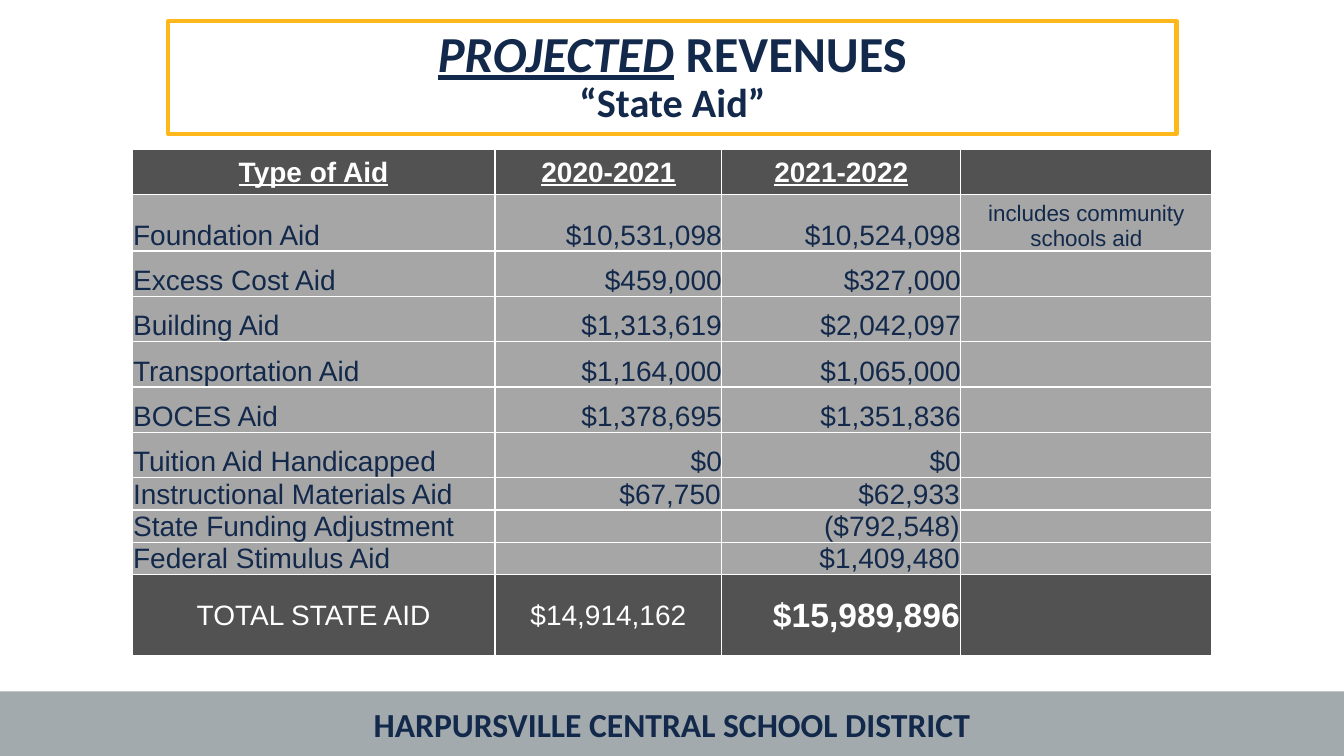
from lxml import etree
from pptx import Presentation
from pptx.dml.color import RGBColor
from pptx.enum.shapes import MSO_SHAPE as SHAPE
from pptx.enum.text import MSO_ANCHOR as ANCHOR, PP_ALIGN as ALIGN
from pptx.oxml.ns import qn
from pptx.util import Inches, Pt

TITLE = [("PROJECTED", 36, True), (" REVENUES", 36, False), ("“State Aid”", 28.8, False)]
FOOTER = "HARPURSVILLE CENTRAL SCHOOL DISTRICT"
ROWS = [
    ("Type of Aid", "2020-2021", "2021-2022", ""),
    ("Foundation Aid", "$10,531,098", "$10,524,098", "includes community schools aid"),
    ("Excess Cost Aid", "$459,000", "$327,000", ""),
    ("Building Aid", "$1,313,619", "$2,042,097", ""),
    ("Transportation Aid", "$1,164,000", "$1,065,000", ""),
    ("BOCES Aid", "$1,378,695", "$1,351,836", ""),
    ("Tuition Aid Handicapped", "$0", "$0", ""),
    ("Instructional Materials Aid", "$67,750", "$62,933", ""),
    ("State Funding Adjustment", "", "($792,548)", ""),
    ("Federal Stimulus Aid", "", "$1,409,480", ""),
    ("TOTAL STATE AID", "$14,914,162", "$15,989,896", ""),
]
COL_WIDTHS = [3.6, 2.25, 2.37, 2.49]
ROW_HEIGHTS = [0.45, 0.56] + [0.45] * 5 + [0.32] * 3 + [0.8]
BODY_ALIGN = [ALIGN.LEFT, ALIGN.RIGHT, ALIGN.RIGHT, ALIGN.CENTER]
THEME = dict(
    navy="13294B", gold="FFB81C", silver="A2AAAD", dark="525252", body="A6A6A6", white="FFFFFF",
    heading_font="Calibri", table_font="Arial", footer=24, cell=20, note=16, total=24,
)


def rgb(name):
    return RGBColor.from_string(THEME[name])


def style(r, font, size, color, bold=False):
    r.font.name, r.font.size, r.font.bold = THEME[font], Pt(size), bold
    r.font.color.rgb = rgb(color)


def add_box(slide, left, top, width, height, fill=None, line=None):
    sp = slide.shapes.add_shape(SHAPE.RECTANGLE, *map(Inches, (left, top, width, height)))
    sp.shadow.inherit = False
    if fill:
        sp.fill.solid()
        sp.fill.fore_color.rgb = rgb(fill)
    else:
        sp.fill.background()
    if line:
        sp.line.color.rgb = rgb(line)
        sp.line.width = Pt(3)
    else:
        sp.line.fill.background()
    tf = sp.text_frame
    tf.word_wrap, tf.vertical_anchor = True, ANCHOR.MIDDLE
    p = tf.paragraphs[0]
    p.alignment = ALIGN.CENTER
    return p


def add_borders(cell):
    pr = cell._tc.get_or_add_tcPr()
    for i, side in enumerate(("lnL", "lnR", "lnT", "lnB")):
        ln = etree.Element(qn(f"a:{side}"), w=str(Pt(1)))
        fill = etree.SubElement(ln, qn("a:solidFill"))
        etree.SubElement(fill, qn("a:srgbClr"), val=THEME["white"])
        pr.insert(i, ln)


def fill_cell(cell, text, row, col):
    header, total = row == 0, row == len(ROWS) - 1
    band = header or total
    grand_total = total and col == 2
    note = not band and col == 3
    tight = 0 < row < 7 and col in (1, 2)
    cell.fill.solid()
    cell.fill.fore_color.rgb = rgb("dark" if band else "body")
    cell.margin_left = cell.margin_right = cell.margin_top = Inches(0 if tight else 0.01)
    cell.margin_bottom = 0
    cell.vertical_anchor = ANCHOR.MIDDLE if band else ANCHOR.BOTTOM
    add_borders(cell)
    if not text:
        return
    cell.text_frame.text = text
    p = cell.text_frame.paragraphs[0]
    p.alignment = ALIGN.CENTER if band and not grand_total else BODY_ALIGN[col]
    r = p.runs[0]
    size = THEME["total" if grand_total else "note" if note else "cell"]
    style(r, "table_font", size, "white" if band else "navy", header or grand_total)
    r.font.underline = header


def add_aid_table(slide):
    frame = slide.shapes.add_table(
        len(ROWS), len(COL_WIDTHS), Inches(1.31), Inches(1.48),
        Inches(sum(COL_WIDTHS)), Inches(sum(ROW_HEIGHTS)))
    table = frame.table
    for column, width in zip(table.columns, COL_WIDTHS):
        column.width = Inches(width)
    for i, (values, height) in enumerate(zip(ROWS, ROW_HEIGHTS)):
        table.rows[i].height = Inches(height)
        for j, text in enumerate(values):
            fill_cell(table.cell(i, j), text, i, j)


def main():
    prs = Presentation()
    prs.slide_width, prs.slide_height = Inches(13.33), Inches(7.5)
    s = prs.slides.add_slide(prs.slide_layouts[6])

    p = add_box(s, 0, 6.86, 13.33, 0.64, fill="silver")
    p.text = FOOTER
    style(p.runs[0], "heading_font", THEME["footer"], "navy", True)

    p = add_box(s, 1.67, 0.21, 10, 1.12, line="gold")
    p.line_spacing = 0.9
    for i, (text, size, emphasis) in enumerate(TITLE):
        if i == len(TITLE) - 1:
            p.add_line_break()
        r = p.add_run()
        r.text = text
        style(r, "heading_font", size, "navy", True)
        r.font.italic = r.font.underline = emphasis

    add_aid_table(s)
    prs.save("out.pptx")


if __name__ == "__main__":
    main()
